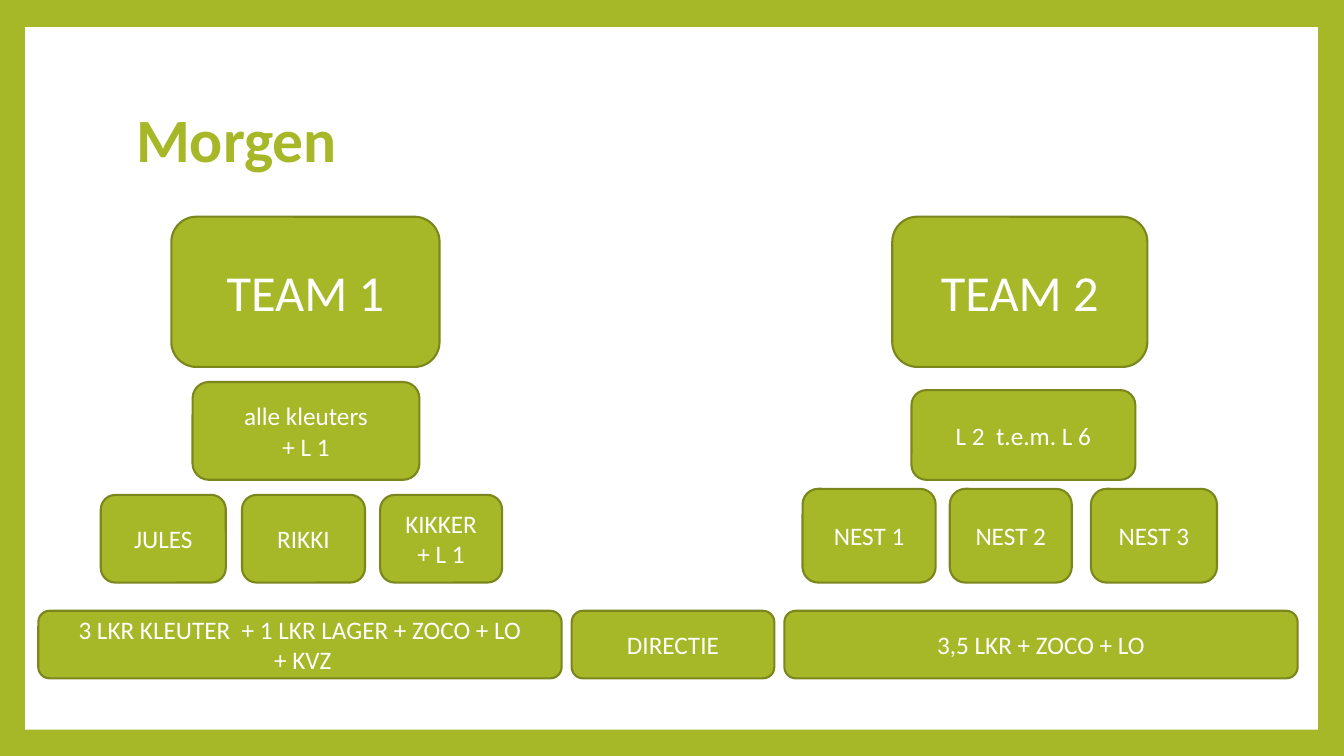
from pptx import Presentation
from pptx.dml.color import RGBColor
from pptx.enum.shapes import MSO_SHAPE
from pptx.enum.text import MSO_ANCHOR, PP_ALIGN
from pptx.util import Inches, Pt

GREEN, DARK_GREEN, WHITE = "A6B727", "7B871D", "FFFFFF"
FONT = "Calibri"

# Each row: top, height, text size, then boxes as (left, width, lines)
ROWS = [
    (2.15, 1.49, 36, [(1.7, 2.66, ["TEAM 1"]), (8.85, 2.53, ["TEAM 2"])]),
    (3.79, 0.97, 18, [(1.91, 2.25, ["alle kleuters", "+ L 1"])]),
    (3.87, 0.89, 18, [(9.04, 2.22, ["L 2  t.e.m. L 6"])]),
    (4.91, 0.87, 18, [(1, 1.24, ["JULES"]), (2.4, 1.22, ["RIKKI"]),
                      (3.77, 1.21, ["KIKKER", "+ L 1"])]),
    (4.85, 0.93, 18, [(7.96, 1.32, ["NEST 1"]), (9.42, 1.21, ["NEST 2"]),
                      (10.82, 1.25, ["NEST 3"])]),
    (6.06, 0.67, 18, [
        (0.38, 5.19, ["3 LKR KLEUTER  + 1 LKR LAGER + ZOCO + LO", " + KVZ"]),
        (5.67, 2.01, ["DIRECTIE"]),
        (7.78, 5.09, ["3,5 LKR + ZOCO + LO"])]),
]


def paint(target, color):
    target.solid()
    target.fore_color.rgb = RGBColor.from_string(color)


def add_span(para, text, size, color, bold=False):
    span = para.add_run()
    span.text = text
    span.font.name = FONT
    span.font.size = Pt(size)
    span.font.bold = bold
    span.font.color.rgb = RGBColor.from_string(color)


deck = Presentation()
deck.slide_width, deck.slide_height = Inches(13.33), Inches(7.5)
page = deck.slides.add_slide(deck.slide_layouts[5])
paint(page.background.fill, GREEN)

title = page.shapes.title
title.left, title.top = Inches(1.25), Inches(0.67)
title.width, title.height = Inches(10.8), Inches(1.48)
title.text_frame.vertical_anchor = MSO_ANCHOR.MIDDLE
para = title.text_frame.paragraphs[0]
para.alignment = PP_ALIGN.LEFT
para.line_spacing = 0.9
add_span(para, "Morgen", 44, GREEN, bold=True)

panel = page.shapes.add_shape(MSO_SHAPE.RECTANGLE, Inches(0.25), Inches(0.27),
                              Inches(12.82), Inches(6.97))
panel.shadow.inherit = False
paint(panel.fill, WHITE)
panel.line.fill.background()
title._element.addprevious(panel._element)  # the panel lies behind the title

for top, height, size, boxes in ROWS:
    for left, width, lines in boxes:
        box = page.shapes.add_shape(
            MSO_SHAPE.FLOWCHART_ALTERNATE_PROCESS,
            Inches(left), Inches(top), Inches(width), Inches(height))
        box.shadow.inherit = False
        paint(box.fill, GREEN)
        paint(box.line.fill, DARK_GREEN)
        box.line.width = Pt(1.5)
        frame = box.text_frame
        frame.word_wrap = True
        frame.vertical_anchor = MSO_ANCHOR.MIDDLE
        for index, line in enumerate(lines):
            para = frame.add_paragraph() if index else frame.paragraphs[0]
            para.alignment = PP_ALIGN.CENTER
            add_span(para, line, size, WHITE)

deck.save("out.pptx")
